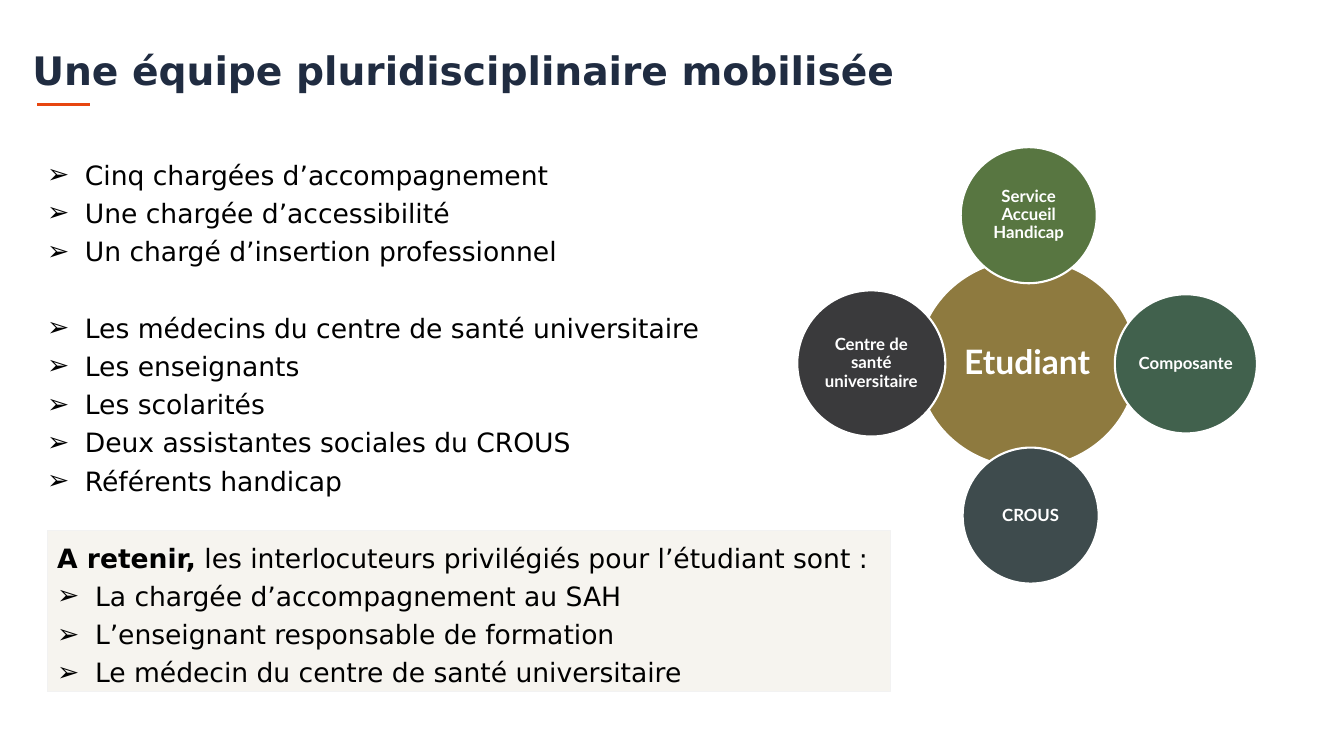
from lxml import etree
from pptx import Presentation
from pptx.dml.color import RGBColor
from pptx.enum import shapes, text
from pptx.oxml import ns
from pptx.util import Pt

COLORS = {
    "title": "202C41", "accent": "E74610", "body": "000000", "white": "FFFFFF",
    "box": "F6F4EF", "box_line": "F2F2F2", "student": "8E7A3F", "service": "587641",
    "faculty": "41614D", "crous": "3E4B4D", "health": "3A3A3C",
}
BODY_FONT = "DejaVu Sans"
CIRCLE_FONT = "Lato"
LINE_GAP = 27.4

TEAM = ["Cinq chargées d’accompagnement", "Une chargée d’accessibilité",
        "Un chargé d’insertion professionnel"]
PARTNERS = ["Les médecins du centre de santé universitaire", "Les enseignants",
            "Les scolarités", "Deux assistantes sociales du CROUS", "Référents handicap"]
CONTACTS = ["La chargée d’accompagnement au SAH", "L’enseignant responsable de formation",
            "Le médecin du centre de santé universitaire"]
CIRCLES = [
    ("Etudiant", "student", 24, (655.2, 185, 157, 149)),
    ("Service Accueil Handicap", "service", 12, (686.2, 105.1, 97.2, 97.2)),
    ("Composante", "faculty", 12, (796.3, 210.2, 101.5, 99.4)),
    ("CROUS", "crous", 12, (687.6, 319.7, 97.2, 97.2)),
    ("Centre de santé universitaire", "health", 12, (569.5, 207.4, 105.8, 104.4)),
]


def color(name):
    return RGBColor.from_string(COLORS[name])


def apply(target, values):
    for name, value in values.items():
        setattr(target, name, value)


def add_run(paragraph, words, size, color_name, font=BODY_FONT, bold=False):
    run = paragraph.add_run()
    run.text = words
    apply(run.font, {"name": font, "size": Pt(size), "bold": bold})
    run.font.color.rgb = color(color_name)


def add_bullet(paragraph, words, indent, space_before=0):
    properties = paragraph._p.get_or_add_pPr()
    properties.set("marL", str(Pt(indent)))
    properties.set("indent", str(-Pt(indent)))
    etree.SubElement(properties, ns.qn("a:buFont")).set("typeface", BODY_FONT)
    etree.SubElement(properties, ns.qn("a:buChar")).set("char", "➢")
    apply(paragraph, {"alignment": text.PP_ALIGN.JUSTIFY, "line_spacing": 1.2,
                      "space_before": Pt(space_before)})
    add_run(paragraph, words, 19, "body")


def add_text_box(slide, bounds):
    frame = slide.shapes.add_textbox(*map(Pt, bounds)).text_frame
    apply(frame, {"word_wrap": True, "auto_size": text.MSO_AUTO_SIZE.SHAPE_TO_FIT_TEXT})
    return frame


def add_filled_shape(slide, kind, bounds, fill, line, line_width):
    shape = slide.shapes.add_shape(kind, *map(Pt, bounds))
    shape.shadow.inherit = False
    shape.fill.solid()
    shape.fill.fore_color.rgb = color(fill)
    shape.line.color.rgb = color(line)
    shape.line.width = Pt(line_width)
    return shape


def add_title(slide, words):
    rule = slide.shapes.add_connector(
        shapes.MSO_CONNECTOR.STRAIGHT, *map(Pt, (26.6, 74.5, 64.4, 74.5)))
    rule.line.color.rgb = color("accent")
    rule.line.width = Pt(2.25)
    etree.SubElement(rule._element.spPr, ns.qn("a:effectLst"))
    frame = add_text_box(slide, (16, 29.5, 688, 41))
    add_run(frame.paragraphs[0], words, 28, "title", bold=True)


def add_team_list(slide):
    frame = add_text_box(slide, (26.6, 105.1, 643, 252.7))
    for index, words in enumerate(TEAM + PARTNERS):
        paragraph = frame.add_paragraph() if index else frame.paragraphs[0]
        add_bullet(paragraph, words, 27, LINE_GAP if index == len(TEAM) else 0)


def add_contact_box(slide):
    shape = add_filled_shape(slide, shapes.MSO_SHAPE.RECTANGLE, (33.8, 378.7, 602, 115.2),
                             "box", "box_line", 0.75)
    frame = shape.text_frame
    apply(frame, {"word_wrap": True, "vertical_anchor": text.MSO_ANCHOR.TOP,
                  "auto_size": text.MSO_AUTO_SIZE.SHAPE_TO_FIT_TEXT})
    heading = frame.paragraphs[0]
    apply(heading, {"alignment": text.PP_ALIGN.LEFT, "line_spacing": 1.2})
    add_run(heading, "A retenir,", 19, "body", bold=True)
    add_run(heading, " les interlocuteurs privilégiés pour l’étudiant sont :", 19, "body")
    for words in CONTACTS:
        add_bullet(frame.add_paragraph(), words, 27)


def add_circle(slide, words, fill, size, bounds):
    shape = add_filled_shape(slide, shapes.MSO_SHAPE.OVAL, bounds, fill, "white", 1.5)
    frame = shape.text_frame
    apply(frame, {"word_wrap": True, "vertical_anchor": text.MSO_ANCHOR.MIDDLE,
                  "margin_left": 0, "margin_right": 0, "margin_top": 0, "margin_bottom": 0})
    paragraph = frame.paragraphs[0]
    apply(paragraph, {"alignment": text.PP_ALIGN.CENTER, "line_spacing": 0.9})
    add_run(paragraph, words, size, "white", CIRCLE_FONT, True)


def main():
    presentation = Presentation()
    apply(presentation, {"slide_width": Pt(960), "slide_height": Pt(540)})
    slide = presentation.slides.add_slide(presentation.slide_layouts[6])
    add_title(slide, "Une équipe pluridisciplinaire mobilisée")
    add_team_list(slide)
    add_contact_box(slide)
    for circle in CIRCLES:
        add_circle(slide, *circle)
    presentation.save("out.pptx")


if __name__ == "__main__":
    main()
